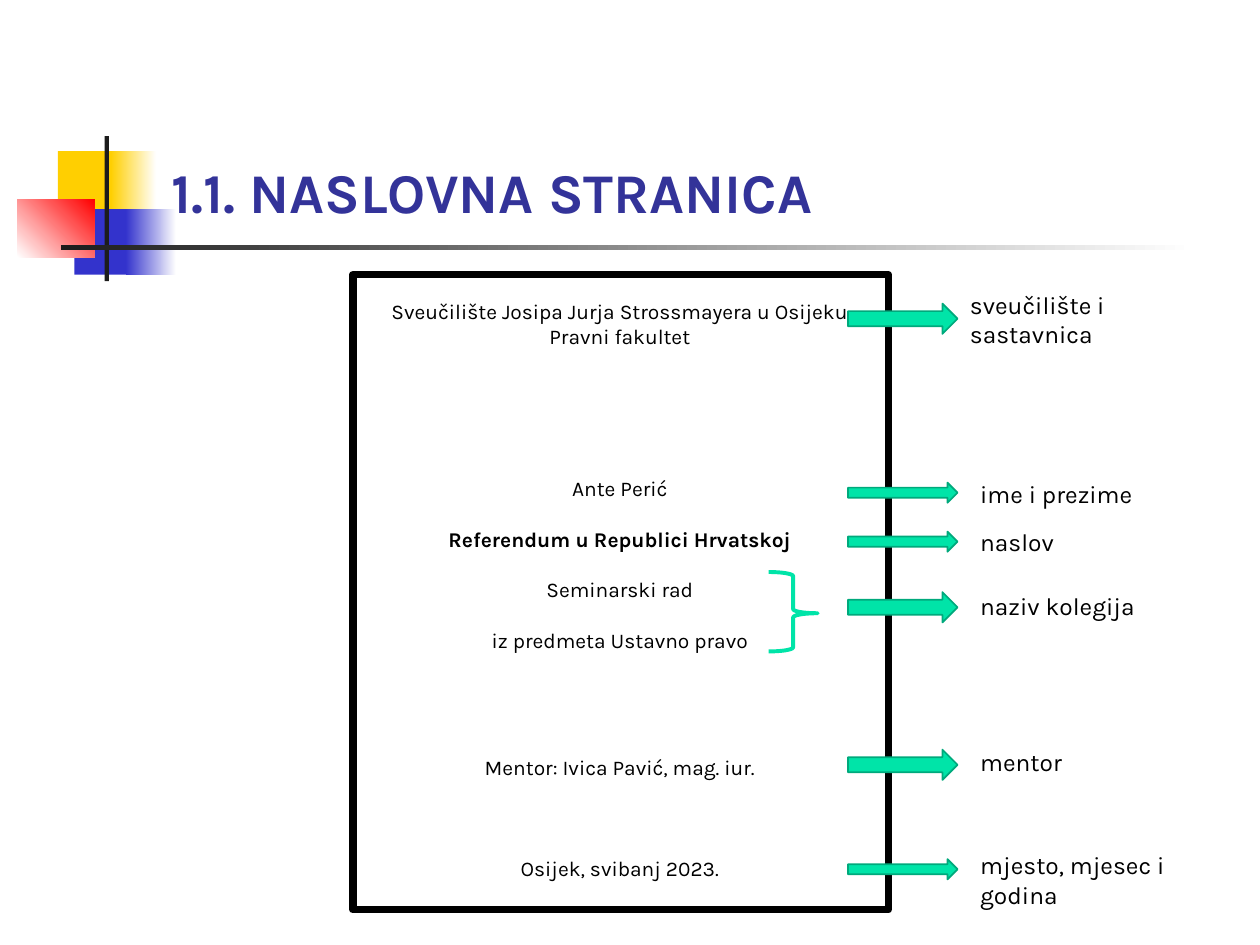
import pptx
import pptx.dml.color
import pptx.enum.shapes
import pptx.enum.text
import pptx.util

Pt = pptx.util.Pt
RGBColor = pptx.dml.color.RGBColor
Shape = pptx.enum.shapes.MSO_SHAPE
Align = pptx.enum.text.PP_ALIGN
Anchor = pptx.enum.text.MSO_ANCHOR

BLACK = RGBColor(0x00, 0x00, 0x00)
WHITE = RGBColor(0xFF, 0xFF, 0xFF)
CHARCOAL = RGBColor(0x1C, 0x1C, 0x1C)
YELLOW = RGBColor(0xFF, 0xCF, 0x01)
BLUE = RGBColor(0x33, 0x33, 0xCC)
RED = RGBColor(0xFF, 0x00, 0x00)
NAVY = RGBColor(0x33, 0x33, 0x99)
GREEN = RGBColor(0x00, 0xE4, 0xA8)
DARK_GREEN = RGBColor(0x00, 0xA9, 0x7C)

FONT = "Karla"
BLANK_LINE = 14.5


def write_paragraph(paragraph, text, size=12, color=BLACK, bold=False,
                    align=Align.LEFT, space_before=0):
    paragraph.alignment = align
    paragraph.space_before = Pt(space_before)
    run = paragraph.add_run()
    run.text = text
    run.font.name = FONT
    run.font.size = Pt(size)
    run.font.bold = bold
    run.font.color.rgb = color


class SlideBuilder:
    def __init__(self, slide):
        self.slide = slide

    def shape(self, kind, box, fill=None, line=None, line_width=1):
        shape = self.slide.shapes.add_shape(kind, *map(Pt, box))
        shape.shadow.inherit = False
        if fill is None:
            shape.fill.background()
        else:
            shape.fill.solid()
            shape.fill.fore_color.rgb = fill
        if line is None:
            shape.line.fill.background()
        else:
            shape.line.color.rgb = line
            shape.line.width = Pt(line_width)
        return shape

    def gradient(self, box, start, end, angle=0):
        fill = self.shape(Shape.RECTANGLE, box).fill
        fill.gradient()
        fill.gradient_angle = angle
        for stop, color in zip(fill.gradient_stops, (start, end)):
            stop.color.rgb = color

    def text(self, box, anchor=Anchor.TOP):
        frame = self.slide.shapes.add_textbox(*map(Pt, box)).text_frame
        frame.word_wrap = True
        frame.vertical_anchor = anchor
        return frame

    def label(self, box, text, **style):
        anchor = style.pop("anchor", Anchor.TOP)
        write_paragraph(self.text(box, anchor).paragraphs[0], text, **style)

    def arrow(self, top, height):
        self.shape(Shape.RIGHT_ARROW, (484.6, top, 62.6, height), GREEN, DARK_GREEN)

    def brace(self, box):
        brace = self.shape(Shape.RIGHT_BRACE, box, line=GREEN, line_width=2.25)
        brace.adjustments[0] = 0.083
        brace.adjustments[1] = 0.519


def add_decoration(builder):
    builder.shape(Shape.RECTANGLE, (33.1, 86.4, 34.6, 37.4), YELLOW)
    builder.gradient((63.4, 86.4, 25.9, 37.4), YELLOW, WHITE)
    builder.shape(Shape.RECTANGLE, (42.5, 119.5, 33.1, 37.4), BLUE)
    builder.gradient((72, 119.5, 28.8, 37.4), BLUE, WHITE)
    builder.gradient((10, 113.8, 44, 33.1), WHITE, RED, angle=45)
    builder.shape(Shape.RECTANGLE, (59.8, 77.8, 2.4, 82.8), CHARCOAL)
    builder.gradient((34.6, 140.2, 648, 2.4), CHARCOAL, WHITE)


def add_title_page(builder):
    builder.shape(Shape.RECTANGLE, (201.6, 157, 306, 362.9), line=BLACK, line_width=4.25)
    lines = [
        ("Sveučilište Josipa Jurja Strossmayera u Osijeku", 0, False),
        ("Pravni fakultet", 0, False),
        ("Ante Perić", 5, False),
        ("Referendum u Republici Hrvatskoj", 1, True),
        ("Seminarski rad", 1, False),
        ("iz predmeta Ustavno pravo", 1, False),
        ("Mentor: Ivica Pavić, mag. iur.", 4, False),
        ("Osijek, svibanj 2023.", 3, False),
    ]
    frame = builder.text((212.4, 167, 283.7, 341.3))
    for index, (text, gap, bold) in enumerate(lines):
        paragraph = frame.add_paragraph() if index else frame.paragraphs[0]
        write_paragraph(paragraph, text, bold=bold, align=Align.CENTER,
                        space_before=gap * BLANK_LINE)


def add_explanations(builder):
    explanations = [
        ("sveučilište i sastavnica", 173.5, 17.3, (547.2, 162, 141.8, 41)),
        ("ime i prezime", 275.8, 11.5, (553, 270, 118.8, 24.5)),
        ("naslov", 303.8, 11.5, (553, 297.4, 113, 24.5)),
        ("naziv kolegija", 338.4, 17.3, (553, 334.1, 118.8, 24.5)),
        ("mentor", 428.4, 17.3, (553, 423.4, 113, 24.5)),
        ("mjesto, mjesec i godina", 491, 11.5, (553, 482.4, 167, 24.5)),
    ]
    for text, arrow_top, arrow_height, box in explanations:
        builder.arrow(arrow_top, arrow_height)
        builder.label(box, text, size=14)
    builder.brace((439.2, 326.9, 28.1, 45.4))


def main():
    presentation = pptx.Presentation()
    presentation.slide_width = Pt(720)
    presentation.slide_height = Pt(540)
    builder = SlideBuilder(presentation.slides.add_slide(presentation.slide_layouts[6]))
    add_decoration(builder)
    builder.label((90.7, 16.6, 613.4, 115.2), "1.1. NASLOVNA STRANICA",
                  size=32, color=NAVY, bold=True, anchor=Anchor.BOTTOM)
    add_title_page(builder)
    add_explanations(builder)
    presentation.save("out.pptx")


if __name__ == "__main__":
    main()
